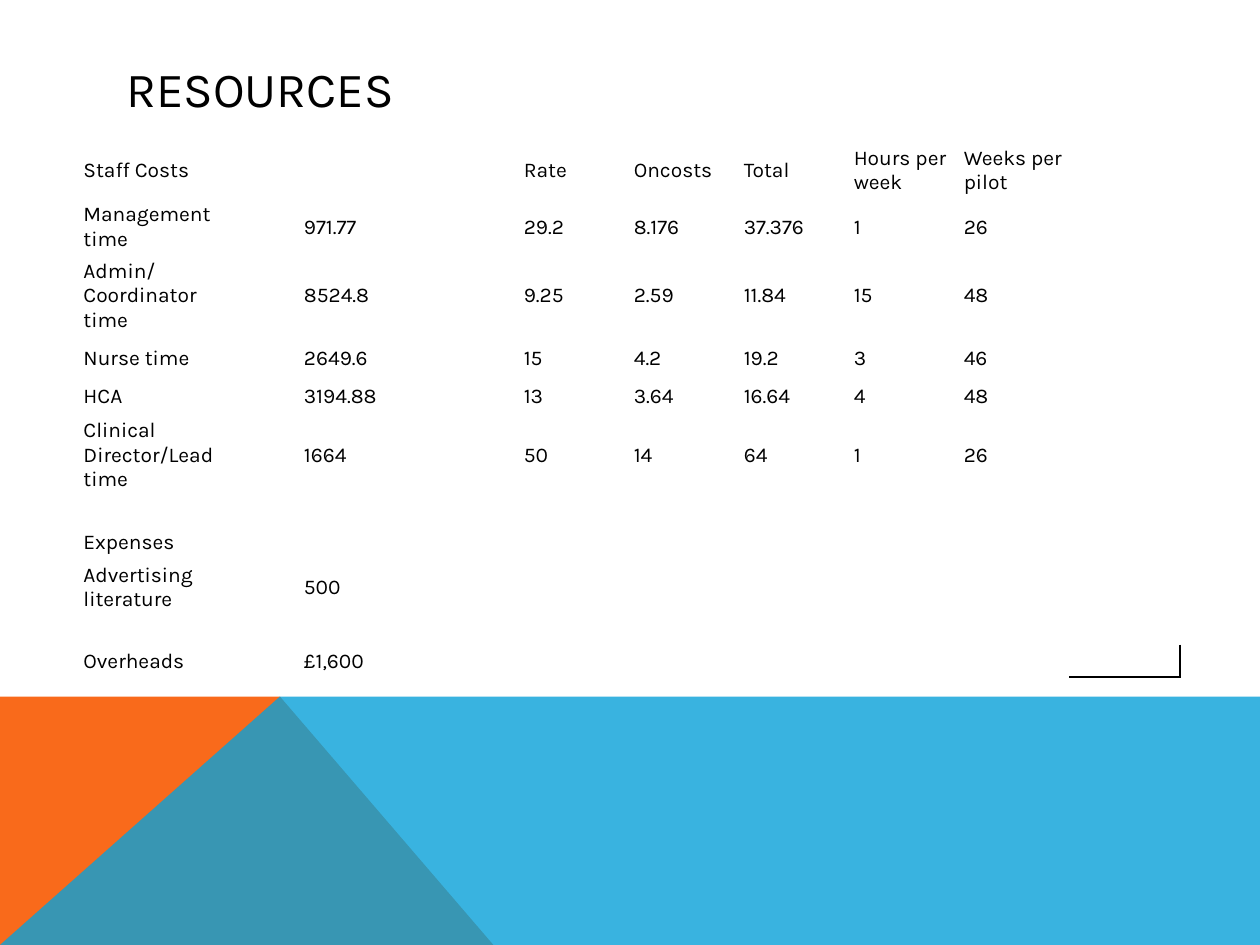
from dataclasses import dataclass

from lxml import etree
from pptx import Presentation
from pptx import util as u
from pptx.dml.color import RGBColor
from pptx.enum import text
from pptx.oxml import ns

Pt = u.Pt
BLACK = RGBColor(0x00, 0x00, 0x00)
ORANGE = RGBColor(0xF9, 0x6A, 0x1B)
BLUE = RGBColor(0x08, 0xA1, 0xD9)
FONT = "Karla"
WIDTH, HEIGHT = 720, 540
BAND_TOP, PEAK_X = 397.5, 160.5


@dataclass
class Band:
    points: list[tuple[float, float]]
    color: RGBColor
    opacity: int = 100


@dataclass
class Row:
    height: float
    label: str = ""
    cost: str = ""
    details: tuple[str, ...] = ()

    def texts(self) -> list[str]:
        cells = [self.label, "", self.cost, "", *self.details]
        return cells + [""] * (len(COLUMNS) - len(cells))


COLUMNS = [94.5, 31.5] + [62.86] * 8

BANDS = [
    Band([(0, HEIGHT), (0, BAND_TOP), (PEAK_X, BAND_TOP), (281.5, HEIGHT)], ORANGE),
    Band([(0, HEIGHT), (PEAK_X, BAND_TOP), (WIDTH, BAND_TOP), (WIDTH, HEIGHT)], BLUE, 80),
]

ROWS = [
    Row(10),
    Row(30.4, "Staff Costs", "",
        ("Rate", "Oncosts", "Total", "Hours per week", "Weeks per pilot")),
    Row(33.8, "Management time", "971.77", ("29.2", "8.176", "37.376", "1", "26")),
    Row(45, "Admin/Coordinator time", "8524.8", ("9.25", "2.59", "11.84", "15", "48")),
    Row(26, "Nurse time", "2649.6", ("15", "4.2", "19.2", "3", "46")),
    Row(18, "HCA", "3194.88", ("13", "3.64", "16.64", "4", "48")),
    Row(49, "Clinical Director/Lead time", "1664", ("50", "14", "64", "1", "26")),
    Row(16.2),
    Row(18, "Expenses"),
    Row(33.8, "Advertising literature", "500"),
    Row(16.2),
    Row(18.2, "Overheads", "£1,600"),
]


def style(font, size: float) -> None:
    font.name = FONT
    font.size = Pt(size)
    font.color.rgb = BLACK


def draw_band(s, band: Band) -> None:
    builder = s.shapes.build_freeform(*band.points[0], scale=Pt(1))
    builder.add_line_segments(band.points[1:], close=True)
    sp = builder.convert_to_shape()
    sp.shadow.inherit = False
    sp.fill.solid()
    sp.fill.fore_color.rgb = band.color
    sp.line.fill.background()
    if band.opacity < 100:
        color = sp.fill._xPr.find(ns.qn("a:solidFill"))[0]
        etree.SubElement(color, ns.qn("a:alpha"), val=str(band.opacity * 1000))


def draw_title(s, title: str) -> None:
    sp = s.shapes.title
    sp.left, sp.top, sp.width, sp.height = Pt(65), Pt(29), Pt(592), Pt(43)
    tf = sp.text_frame
    tf.text = title
    tf.vertical_anchor = text.MSO_ANCHOR.MIDDLE
    p = tf.paragraphs[0]
    p.alignment = text.PP_ALIGN.LEFT
    style(p.font, 28)


def fill_cell(cell, value: str) -> None:
    cell.fill.background()
    cell.margin_left = cell.margin_right = Pt(2.2)
    cell.margin_top = cell.margin_bottom = Pt(1.4)
    cell.vertical_anchor = text.MSO_ANCHOR.MIDDLE
    p = cell.text_frame.paragraphs[0]
    if value:
        r = p.add_run()
        r.text = value
        style(r.font, 12)
    else:
        etree.SubElement(p._p, ns.qn("a:endParaRPr"), sz="500")


def add_border(cell, sides: list[str], width: float) -> None:
    tc_pr = cell._tc.get_or_add_tcPr()
    for index, side in enumerate(sides):
        ln = etree.Element(ns.qn(f"a:{side}"), w=str(Pt(width)))
        fill = etree.SubElement(ln, ns.qn("a:solidFill"))
        etree.SubElement(fill, ns.qn("a:srgbClr"), val=str(BLACK))
        tc_pr.insert(index, ln)


def draw_table(s, rows: list[Row], widths: list[float]) -> None:
    frame = s.shapes.add_table(len(rows), len(widths), Pt(45.5), Pt(72),
                               Pt(sum(widths)), Pt(sum(row.height for row in rows)))
    table = frame.table
    table.first_row = table.horz_banding = False
    for column, width in zip(table.columns, widths):
        column.width = Pt(width)
    for table_row, row in zip(table.rows, rows):
        table_row.height = Pt(row.height)
        for cell, value in zip(table_row.cells, row.texts()):
            fill_cell(cell, value)
    add_border(table.cell(len(rows) - 1, len(widths) - 1), ["lnR", "lnB"], 1)


def main() -> None:
    prs = Presentation()
    prs.slide_width, prs.slide_height = Pt(WIDTH), Pt(HEIGHT)
    s = prs.slides.add_slide(prs.slide_layouts.get_by_name("Title Only"))
    for band in BANDS:
        draw_band(s, band)
    draw_title(s, "RESOURCES")
    draw_table(s, ROWS, COLUMNS)
    prs.save("out.pptx")


if __name__ == "__main__":
    main()
